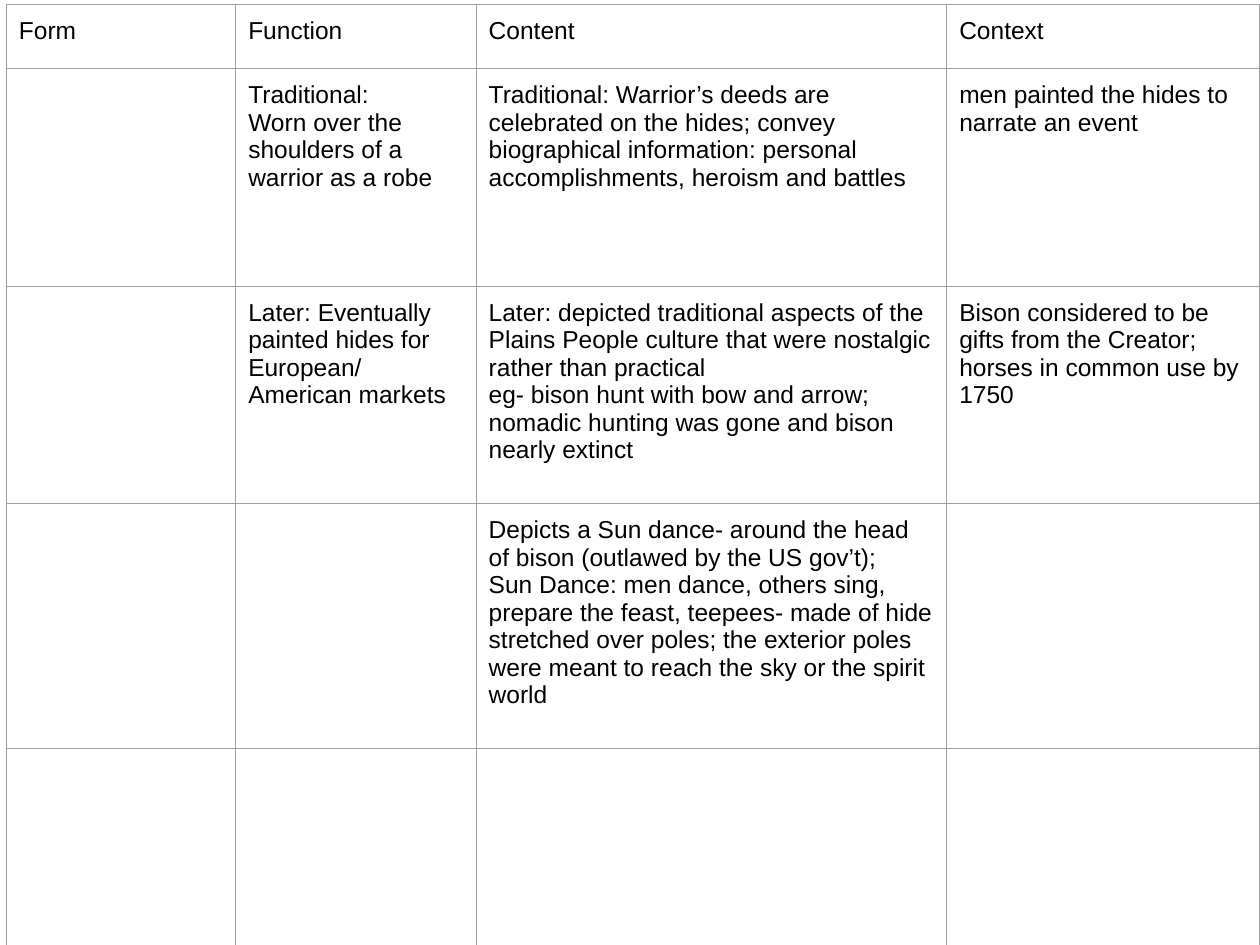
from lxml import etree
from pptx import Presentation
from pptx.dml.color import RGBColor
from pptx.oxml.ns import qn
from pptx.util import Pt

BLACK = RGBColor(0x00, 0x00, 0x00)
GREY = RGBColor(0x9E, 0x9E, 0x9E)
BLANK_LAYOUT = 6
BORDER_TAGS = ("a:lnL", "a:lnR", "a:lnT", "a:lnB")

COLUMN_WIDTHS = (131.1, 137.4, 268.9, 178.9)
ROW_HEIGHTS = (36.6, 124.3, 124.3, 140, 124.3)
# Each line of a cell's text is one paragraph.
ROWS = (
    ("Form", "Function", "Content", "Context"),
    (
        "",
        "Traditional:\nWorn over the shoulders of a warrior as a robe",
        "Traditional: Warrior’s deeds are celebrated on the hides; convey "
        "biographical information: personal accomplishments, heroism and battles",
        "men painted the hides to narrate an event",
    ),
    (
        "",
        "Later: Eventually painted hides for European/ American markets",
        "Later: depicted traditional aspects of the Plains People culture that "
        "were nostalgic rather than practical\n"
        "eg- bison hunt with bow and arrow; nomadic hunting was gone and bison "
        "nearly extinct",
        "Bison considered to be gifts from the Creator; horses in common use by 1750",
    ),
    (
        "",
        "",
        "Depicts a Sun dance- around the head of bison (outlawed by the US gov’t);\n"
        "Sun Dance: men dance, others sing, prepare the feast, teepees- made of "
        "hide stretched over poles; the exterior poles were meant to reach the "
        "sky or the spirit world",
        "",
    ),
    ("", "", "", ""),
)


class SlideBuilder:
    font_format = {"name": "Arial", "size": Pt(14)}
    text_color = BLACK
    border_color = GREY
    border_width = Pt(0.75)
    cell_format = dict.fromkeys(
        ("margin_left", "margin_right", "margin_top", "margin_bottom"), Pt(7.2)
    )
    table_format = {"first_row": False, "horz_banding": False}

    def __init__(self, slide):
        self.slide = slide

    def table(self, left, top, widths, heights, rows):
        frame = self.slide.shapes.add_table(
            len(heights), len(widths), Pt(left), Pt(top),
            Pt(sum(widths)), Pt(sum(heights)),
        )
        table = frame.table
        for name, value in self.table_format.items():
            setattr(table, name, value)
        for column, width in zip(table.columns, widths):
            column.width = Pt(width)
        for row, height, texts in zip(table.rows, heights, rows):
            row.height = Pt(height)
            for cell, text in zip(row.cells, texts):
                self.cell(cell, text)

    def cell(self, cell, text):
        for name, value in self.cell_format.items():
            setattr(cell, name, value)
        cell.fill.background()
        self.borders(cell)
        cell.text = text
        for para in cell.text_frame.paragraphs:
            for name, value in self.font_format.items():
                setattr(para.font, name, value)
            para.font.color.rgb = self.text_color

    def borders(self, cell):
        """Draw all four sides; the schema wants them ahead of the fill."""
        properties = cell._tc.get_or_add_tcPr()
        for index, tag in enumerate(BORDER_TAGS):
            line = etree.Element(qn(tag), w=str(self.border_width))
            fill = etree.SubElement(line, qn("a:solidFill"))
            etree.SubElement(fill, qn("a:srgbClr"), val=str(self.border_color))
            properties.insert(index, line)


def main():
    deck = Presentation()
    deck.slide_width, deck.slide_height = Pt(720), Pt(540)
    page = deck.slides.add_slide(deck.slide_layouts[BLANK_LAYOUT])
    SlideBuilder(page).table(3.6, 2.6, COLUMN_WIDTHS, ROW_HEIGHTS, ROWS)
    deck.save("out.pptx")


if __name__ == "__main__":
    main()
